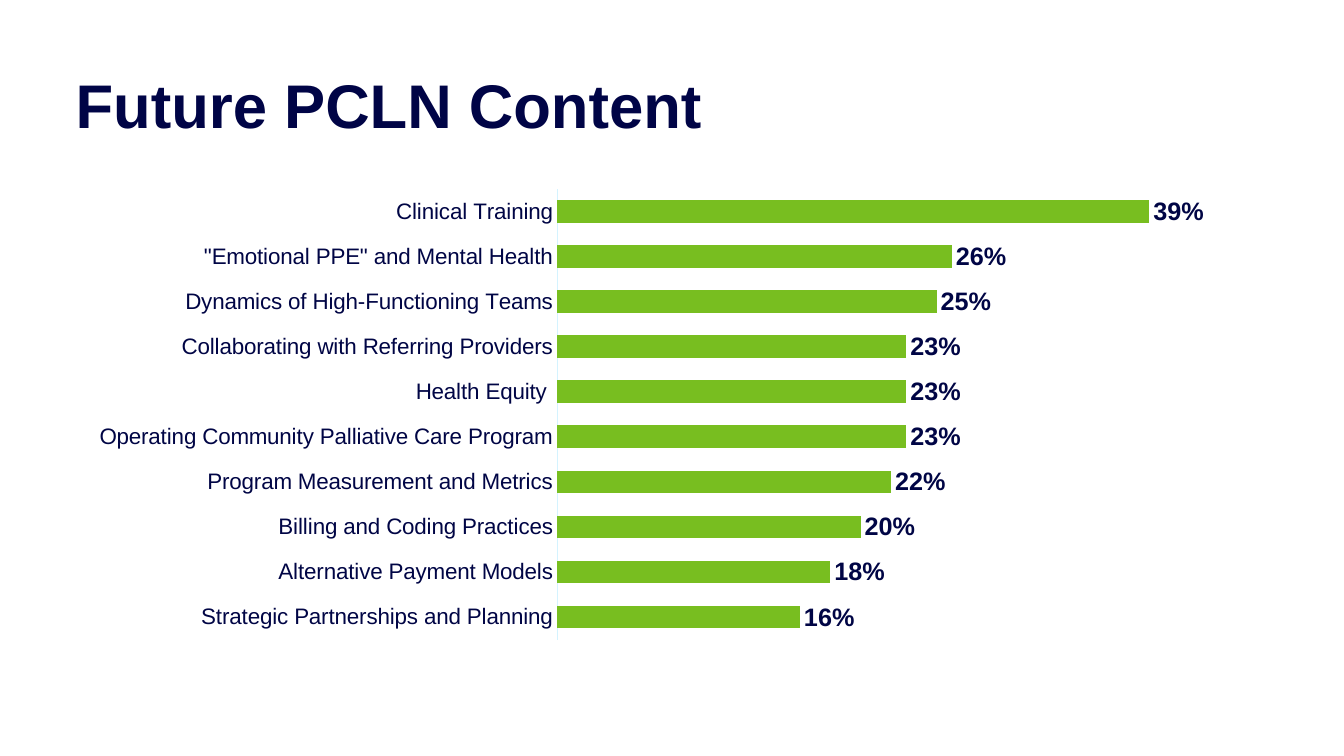
from lxml import etree
from pptx import Presentation
from pptx.chart.data import CategoryChartData
from pptx.dml.color import RGBColor
from pptx.enum.chart import XL_CHART_TYPE, XL_LABEL_POSITION, XL_TICK_MARK
from pptx.enum.text import MSO_ANCHOR, PP_ALIGN
from pptx.oxml.ns import qn
from pptx.util import Inches, Pt

# Content
TITLE = "Future PCLN Content"
TOPICS = {
    "Clinical Training": 0.39,
    "\"Emotional PPE\" and Mental Health": 0.26,
    "Dynamics of High-Functioning Teams": 0.25,
    "Collaborating with Referring Providers": 0.23,
    "Health Equity ": 0.23,
    "Operating Community Palliative Care Program": 0.23,
    "Program Measurement and Metrics": 0.22,
    "Billing and Coding Practices": 0.20,
    "Alternative Payment Models": 0.18,
    "Strategic Partnerships and Planning": 0.16,
}

# Format
COLORS = {"title": "000446", "text": "000545", "bar": "78BE20", "axis": "D4F3FF"}
TITLE_BOX = (0.75, 0.75, 10, 0.67)
CHART_BOX = (0.75, 1.78, 11.79, 4.66)
PLOT_AREA = {"x": 0.405, "y": 0.02, "w": 0.575, "h": 0.96}  # shares of the chart


def color(name):
    return RGBColor.from_string(COLORS[name])


def set_font(font, size, color_name, bold=False):
    for key, value in {"name": "Arial", "size": Pt(size), "bold": bold}.items():
        setattr(font, key, value)
    font.color.rgb = color(color_name)


prs = Presentation()
prs.slide_width, prs.slide_height = Inches(13.33), Inches(7.5)
slide = prs.slides.add_slide(prs.slide_layouts[5])

# Title
title = slide.shapes.title
title.left, title.top, title.width, title.height = map(Inches, TITLE_BOX)
frame = title.text_frame
frame_format = {
    "margin_left": 0, "margin_top": 0, "margin_right": 0, "margin_bottom": 0,
    "word_wrap": True, "vertical_anchor": MSO_ANCHOR.TOP, "text": TITLE,
}
for key, value in frame_format.items():
    setattr(frame, key, value)
heading = frame.paragraphs[0]
heading.alignment = PP_ALIGN.LEFT
heading.line_spacing = 0.9
set_font(heading.runs[0].font, 44, "title", bold=True)

# Bar chart
survey = CategoryChartData(number_format="0%")
survey.categories = list(TOPICS)
survey.add_series("Series 1", list(TOPICS.values()))
chart = slide.shapes.add_chart(
    XL_CHART_TYPE.BAR_CLUSTERED, *map(Inches, CHART_BOX), survey).chart
chart.has_legend = chart.has_title = False
set_font(chart.font, 16, "text")

# Axes
topic_axis = chart.category_axis
topic_axis.reverse_order = True
topic_axis.major_tick_mark = topic_axis.minor_tick_mark = XL_TICK_MARK.NONE
topic_axis.format.line.color.rgb = color("axis")
topic_axis.format.line.width = Pt(0.75)
set_font(topic_axis.tick_labels.font, 16, "text")

share_axis = chart.value_axis
share_format = {"visible": False, "has_major_gridlines": False,
                "minimum_scale": 0, "maximum_scale": 0.45}
for key, value in share_format.items():
    setattr(share_axis, key, value)

# Bars and their labels
bars = chart.plots[0]
bars.gap_width = 100
bars.vary_by_categories = False
bars.series[0].format.fill.solid()
bars.series[0].format.fill.fore_color.rgb = color("bar")
labels = bars.series[0].data_labels
label_format = {"show_value": True, "position": XL_LABEL_POSITION.OUTSIDE_END,
                "number_format": "0%", "number_format_is_linked": False}
for key, value in label_format.items():
    setattr(labels, key, value)
set_font(labels.font, 18, "text", bold=True)

# Fixed plot area inside the chart
plot_area = chart.element.find(".//" + qn("c:plotArea"))
layout = plot_area.find(qn("c:layout"))
if layout is None:
    layout = etree.Element(qn("c:layout"))
    plot_area.insert(0, layout)
manual = etree.SubElement(layout, qn("c:manualLayout"))
settings = {"layoutTarget": "inner", "xMode": "edge", "yMode": "edge", **PLOT_AREA}
for tag, value in settings.items():
    etree.SubElement(manual, qn("c:" + tag)).set("val", str(value))

prs.save("out.pptx")
